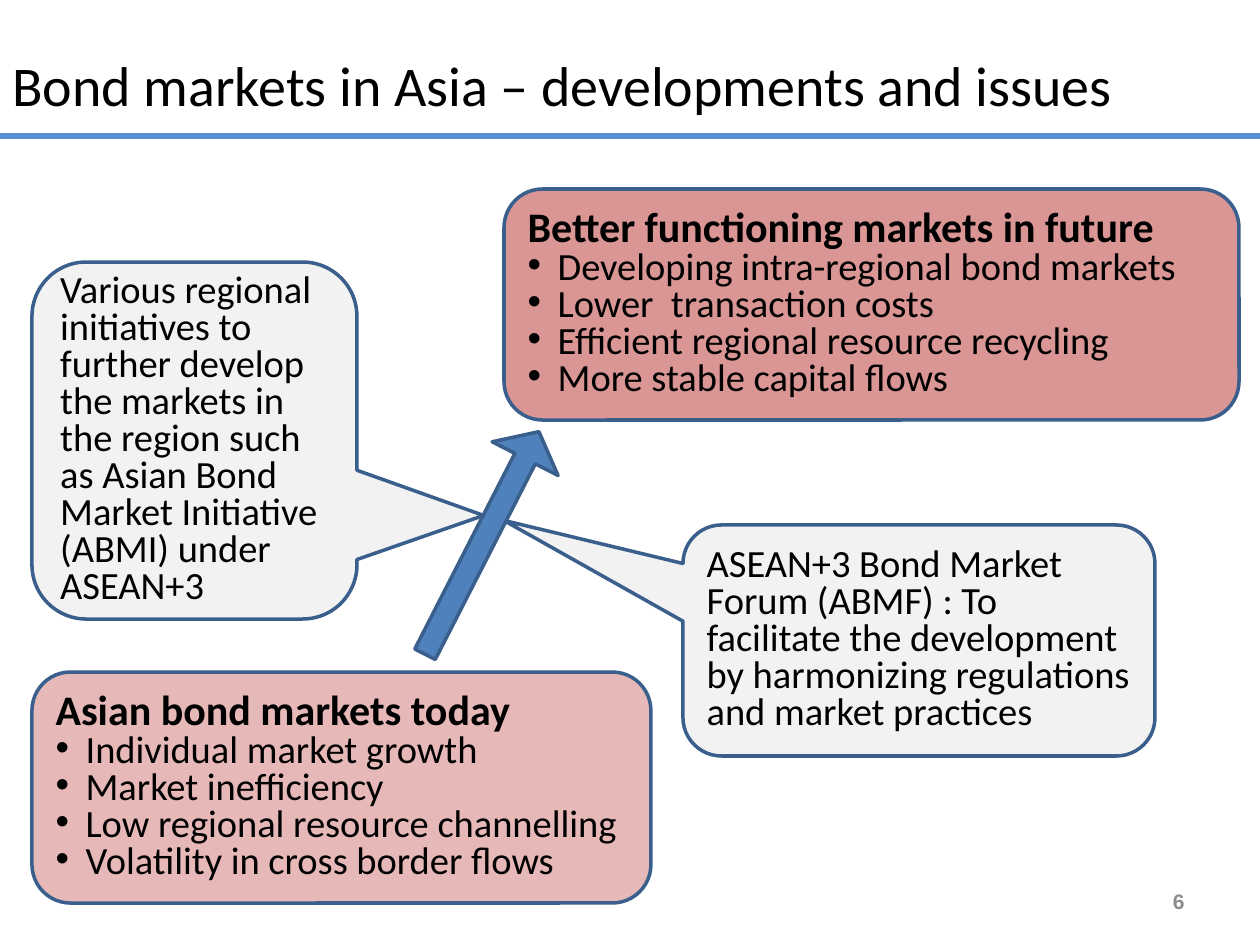
from lxml import etree
from pptx import Presentation
from pptx import util as u
from pptx.dml.color import RGBColor
from pptx.enum import shapes, text
from pptx.oxml import ns

PX = 914400 / 126
BLACK = RGBColor(0x00, 0x00, 0x00)
GREY = RGBColor(0x8C, 0x8C, 0x8C)
PALE = RGBColor(0xF2, 0xF2, 0xF2)
ROSE = RGBColor(0xD9, 0x96, 0x94)
PINK = RGBColor(0xE6, 0xB9, 0xB8)
BLUE = RGBColor(0x4F, 0x81, 0xBD)
RULE_BLUE = RGBColor(0x55, 0x8E, 0xD5)
OUTLINE = RGBColor(0x3A, 0x5F, 0x8C)

SHAPE = shapes.MSO_AUTO_SHAPE_TYPE
ALIGN = text.PP_ALIGN
BULLET_INDENT = 30
HEADING = dict(size=24, bold=True)
BODY = dict(size=22)
PANEL_LINE = dict(line_spacing=0.8)
CALLOUT_LINE = dict(line_spacing=0.8, space_after=u.Pt(12))


def px(*lengths):
    return [u.Emu(round(length * PX)) for length in lengths]


def assign(target, values):
    for name, value in values.items():
        setattr(target, name, value)


class Slide:
    def __init__(self, deck):
        self.page = deck.slides.add_slide(deck.slide_layouts[6])

    def fill_text(self, frame, lines, layout):
        """Fill a frame from (text, font values, bulleted) triples."""
        assign(frame, dict(word_wrap=True, vertical_anchor=text.MSO_ANCHOR.MIDDLE))
        for index, (words, style, bulleted) in enumerate(lines):
            para = frame.add_paragraph() if index else frame.paragraphs[0]
            assign(para, dict(alignment=ALIGN.LEFT) | layout)
            if bulleted:
                self.bullet(para)
            span = para.add_run()
            span.text = words
            font = dict(name="Calibri", bold=False, color=BLACK) | style
            span.font.color.rgb = font.pop("color")
            font["size"] = u.Pt(font["size"])
            assign(span.font, font)

    def bullet(self, para):
        props = para._p.get_or_add_pPr()
        indent = px(BULLET_INDENT)[0]
        props.set("marL", str(indent))
        props.set("indent", str(-indent))
        etree.SubElement(props, ns.qn("a:buFont")).set("typeface", "Arial")
        etree.SubElement(props, ns.qn("a:buChar")).set("char", "•")

    def label(self, place, words, style, **layout):
        box = self.page.shapes.add_textbox(*px(*place))
        self.fill_text(box.text_frame, [(words, style, False)], layout)

    def rule(self, start, end, color, weight):
        line = self.page.shapes.add_connector(
            shapes.MSO_CONNECTOR.STRAIGHT, *px(*start, *end))
        line.line.color.rgb = color
        line.line.width = u.Pt(weight)
        etree.SubElement(line._element.spPr, ns.qn("a:effectLst"))

    def outlined(self, kind, place, fill, adjustments=()):
        box = self.page.shapes.add_shape(kind, *px(*place))
        box.shadow.inherit = False
        box.fill.solid()
        box.fill.fore_color.rgb = fill
        box.line.color.rgb = OUTLINE
        box.line.width = u.Pt(2)
        for index, value in enumerate(adjustments):
            box.adjustments[index] = value
        return box

    def panel(self, place, fill, heading, points):
        box = self.outlined(SHAPE.FLOWCHART_ALTERNATE_PROCESS, place, fill)
        lines = [(heading, HEADING, False)] + [(point, BODY, True) for point in points]
        self.fill_text(box.text_frame, lines, PANEL_LINE)

    def callout(self, place, pointer, words):
        box = self.outlined(SHAPE.ROUNDED_RECTANGULAR_CALLOUT, place, PALE,
                            (*pointer, 0.167))
        self.fill_text(box.text_frame, [(words, BODY, False)], CALLOUT_LINE)

    def arrow(self, place, rotation, adjustments):
        self.outlined(SHAPE.UP_ARROW, place, BLUE, adjustments).rotation = rotation


def main():
    deck = Presentation()
    deck.slide_width, deck.slide_height = px(1260, 945)
    slide = Slide(deck)

    slide.label((903, 876, 294, 50), "6",
                dict(size=12, name="Arial", bold=True, color=GREY), alignment=ALIGN.RIGHT)
    slide.label((0, 42, 1197, 84), "Bond markets in Asia – developments and issues",
                dict(size=32))
    slide.rule((0, 136), (1260, 136), RULE_BLUE, 3)

    slide.callout((683, 525, 472, 231), (-0.88, -0.52),
                  "ASEAN+3 Bond Market Forum (ABMF) : To facilitate the development "
                  "by harmonizing regulations and market practices")
    slide.panel((504, 189, 735, 231), ROSE, "Better functioning markets in future", [
        "Developing intra-regional bond markets",
        "Lower  transaction costs",
        "Efficient regional resource recycling",
        "More stable capital flows",
    ])
    slide.panel((32, 672, 619, 231), PINK, "Asian bond markets today", [
        "Individual market growth",
        "Market inefficiency",
        "Low regional resource channelling",
        "Volatility in cross border flows",
    ])
    slide.arrow((445, 418, 74, 250), 27.1, (0.31, 0.41))
    slide.callout((32, 262, 325, 357), (0.89, 0.21),
                  "Various regional initiatives to further develop the markets in the "
                  "region such as Asian Bond Market Initiative (ABMI) under ASEAN+3")

    deck.save("out.pptx")


if __name__ == "__main__":
    main()
